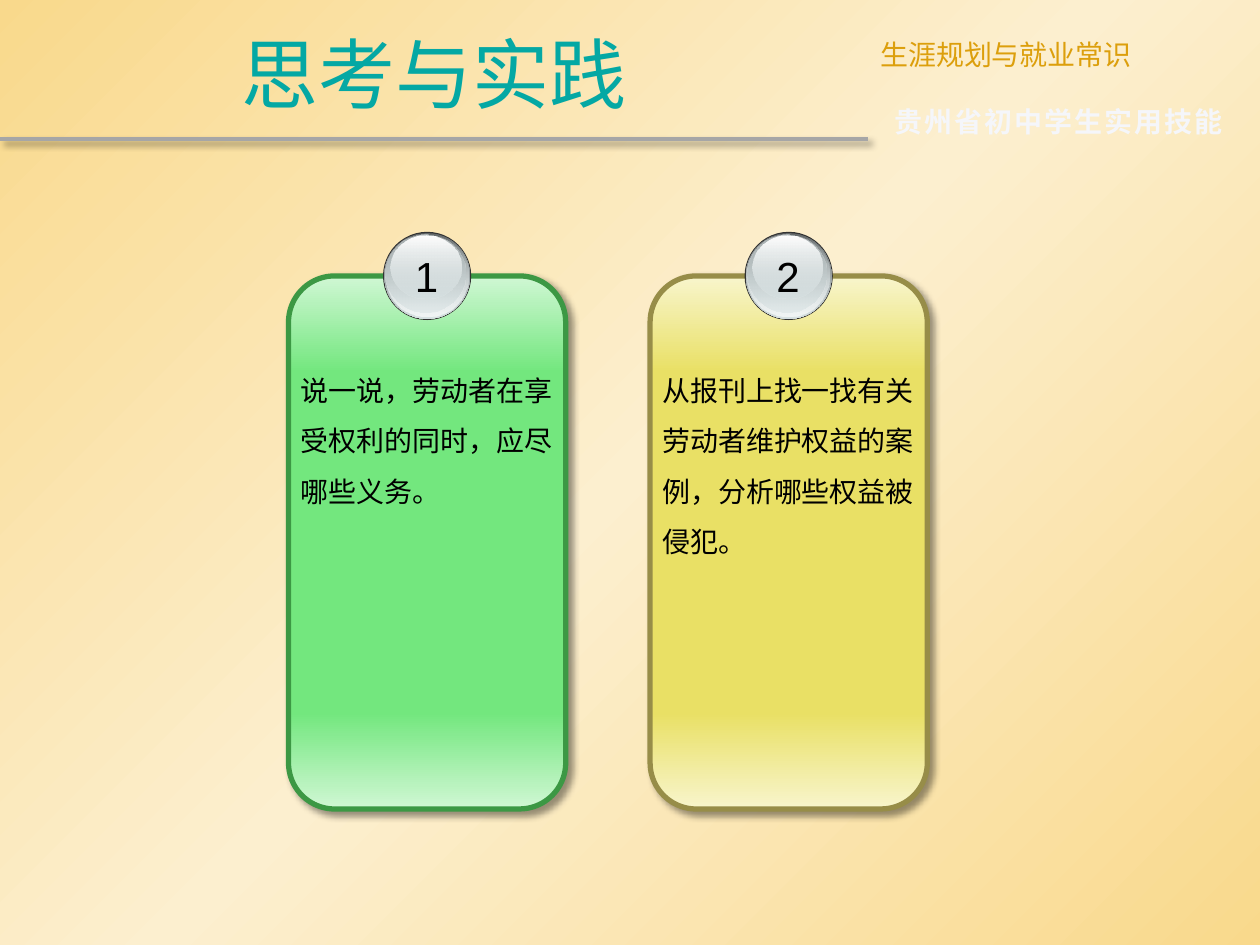
from lxml import etree
from pptx import Presentation
from pptx.dml.color import RGBColor
from pptx.enum.shapes import MSO_CONNECTOR, MSO_SHAPE
from pptx.enum.text import MSO_ANCHOR, MSO_AUTO_SIZE, PP_ALIGN
from pptx.oxml import parse_xml
from pptx.oxml.ns import nsdecls, qn
from pptx.util import Pt

ROUND, OVAL = MSO_SHAPE.ROUNDED_RECTANGLE, MSO_SHAPE.OVAL
LEFT, MID, JUST = PP_ALIGN.LEFT, PP_ALIGN.CENTER, PP_ALIGN.JUSTIFY
GROW, FIXED = MSO_AUTO_SIZE.SHAPE_TO_FIT_TEXT, MSO_AUTO_SIZE.NONE

TITLE = "思考与实践"
TOPIC = "生涯规划与就业常识"
SERIES = "贵州省初中学生实用技能"
CARDS = [
    ("1", "说一说，劳动者在享受权利的同时，应尽哪些义务。", "green", 94.3),
    ("2", "从报刊上找一找有关劳动者维护权益的案例，分析哪些权益被侵犯。", "gold", 123.8),
]

THEME = {
    "cjk": "Noto Sans CJK SC", "latin": "Arial",
    "big": 44, "num": 24, "body": 16,
    "title": "04A8A4", "topic": "DC9F0C", "series": "F5F6FA",
    "ink": "000000", "rule": "A6A6A6", "rim": "333333",
    "back": [(0, "F9D98C"), (50, "FCEFCF"), (100, "F9D98C")],
    "green": ("D0F7D4", "73E77E", "3C9844"),
    "gold": ("F8F5CC", "E9E065", "978D48"),
}

DISCS = [
    (54, 132.5, 50.4, 50.4, None),
    (54.7, 133.2, 49, 49, [(0, "636869"), (100, "D6E1E2")]),
    (55.2, 133.2, 47.5, 47.9, [(0, "D6E1E2", 0), (100, "F1F5F5")]),
    (55.4, 133.9, 45.4, 44.6, [(0, "AAB2B3"), (100, "D6E1E2", 48)]),
    (58.3, 134.6, 40.3, 36, [(0, "FFFFFF"), (100, "D6E1E2", 38)]),
]
WIDE, HIGH = 720, 540
SPLIT, RULE = 496, 79.2
CARD_W, CARD_H, CARD_TOP = 158.4, 304.6, 157.7
FIRST, STEP = 164.9, 206.6


def rgb(code):
    return RGBColor.from_string(code)


def box(*sizes):
    return [Pt(size) for size in sizes]


def blend(host, stops, angle):
    fill = parse_xml(f'<a:gradFill {nsdecls("a")} rotWithShape="1"><a:gsLst/>'
                     f'<a:lin ang="{angle * 60000}" scaled="0"/></a:gradFill>')
    for pos, code, *alpha in stops:
        stop = etree.SubElement(fill[0], qn("a:gs"), pos=str(pos * 1000))
        color = etree.SubElement(stop, qn("a:srgbClr"), val=code)
        for part in alpha:
            etree.SubElement(color, qn("a:alpha"), val=str(part * 1000))
    host.replace(host.find(qn("a:solidFill")), fill)


def shade(shape):
    shape._element.spPr.append(parse_xml(
        f'<a:effectLst {nsdecls("a")}><a:outerShdw blurRad="{Pt(4)}" dist="{Pt(3)}" '
        'dir="2700000" algn="tl" rotWithShape="0"><a:srgbClr val="000000">'
        '<a:alpha val="40000"/></a:srgbClr></a:outerShdw></a:effectLst>'))


def write(shape, text, size, code, align=LEFT, face="cjk", grow=True, wrap=True):
    frame = shape.text_frame
    frame.word_wrap = wrap
    frame.auto_size = GROW if grow else FIXED
    para = frame.paragraphs[0]
    para.text = text
    para.alignment = align
    font = para.font
    font.size = Pt(THEME[size])
    font.color.rgb = rgb(THEME[code])
    font.name = THEME[face]
    props = para._p.pPr.find(qn("a:defRPr"))
    props.find(qn("a:latin")).addnext(
        parse_xml(f'<a:ea {nsdecls("a")} typeface="{THEME["cjk"]}"/>'))
    return para


def add_card(slide, left, num, text, tone, depth):
    pale, main, edge = THEME[tone]
    parts = slide.shapes.add_group_shape().shapes
    panel = parts.add_shape(ROUND, *box(left, CARD_TOP, CARD_W, CARD_H))
    panel.fill.solid()
    panel.line.color.rgb = rgb(edge)
    panel.line.width = Pt(3)
    blend(panel._element.spPr,
          [(0, pale), (18, main), (82, main), (100, pale)], 90)
    shade(panel)

    body = parts.add_textbox(*box(left, 200.2, CARD_W, depth))
    write(body, text, "body", "ink").line_spacing = 1.5

    for dx, top, wide, high, stops in DISCS:
        disc = parts.add_shape(OVAL, *box(left + dx, top, wide, high))
        disc.shadow.inherit = False
        disc.line.fill.background()
        disc.fill.solid()
        disc.fill.fore_color.rgb = rgb(THEME["rim"])
        if stops:
            blend(disc._element.spPr, stops, 90)

    label = parts.add_textbox(*box(left + 64.8, 139.7, 28.1, 36))
    write(label, num, "num", "ink", MID, "latin", wrap=False)


def main():
    deck = Presentation()
    deck.slide_width, deck.slide_height = box(WIDE, HIGH)
    slide = deck.slides.add_slide(deck.slide_layouts[5])
    slide.background.fill.solid()
    blend(slide._element.find(".//" + qn("p:bgPr")), THEME["back"], 45)

    title = slide.shapes.title
    title.left, title.top, title.width, title.height = box(0, 5, SPLIT, 73.4)
    write(title, TITLE, "big", "title", MID, grow=False)
    title.text_frame.vertical_anchor = MSO_ANCHOR.MIDDLE

    rule = slide.shapes.add_connector(
        MSO_CONNECTOR.STRAIGHT, *box(0, RULE, SPLIT, RULE))
    rule.line.color.rgb = rgb(THEME["rule"])
    rule.line.width = Pt(2.25)
    shade(rule)

    topic = slide.shapes.add_textbox(*box(SPLIT, 18, WIDE - SPLIT, 26.6))
    write(topic, TOPIC, "body", "topic", JUST)
    series = slide.shapes.add_textbox(*box(504, 56, WIDE - 504, 26.6))
    para = write(series, SERIES, "body", "series")
    para.font.bold = True
    para._p.pPr.find(qn("a:defRPr")).set("spc", "125")

    for i, card in enumerate(CARDS):
        add_card(slide, FIRST + i * STEP, *card)
    deck.save("out.pptx")


if __name__ == "__main__":
    main()
